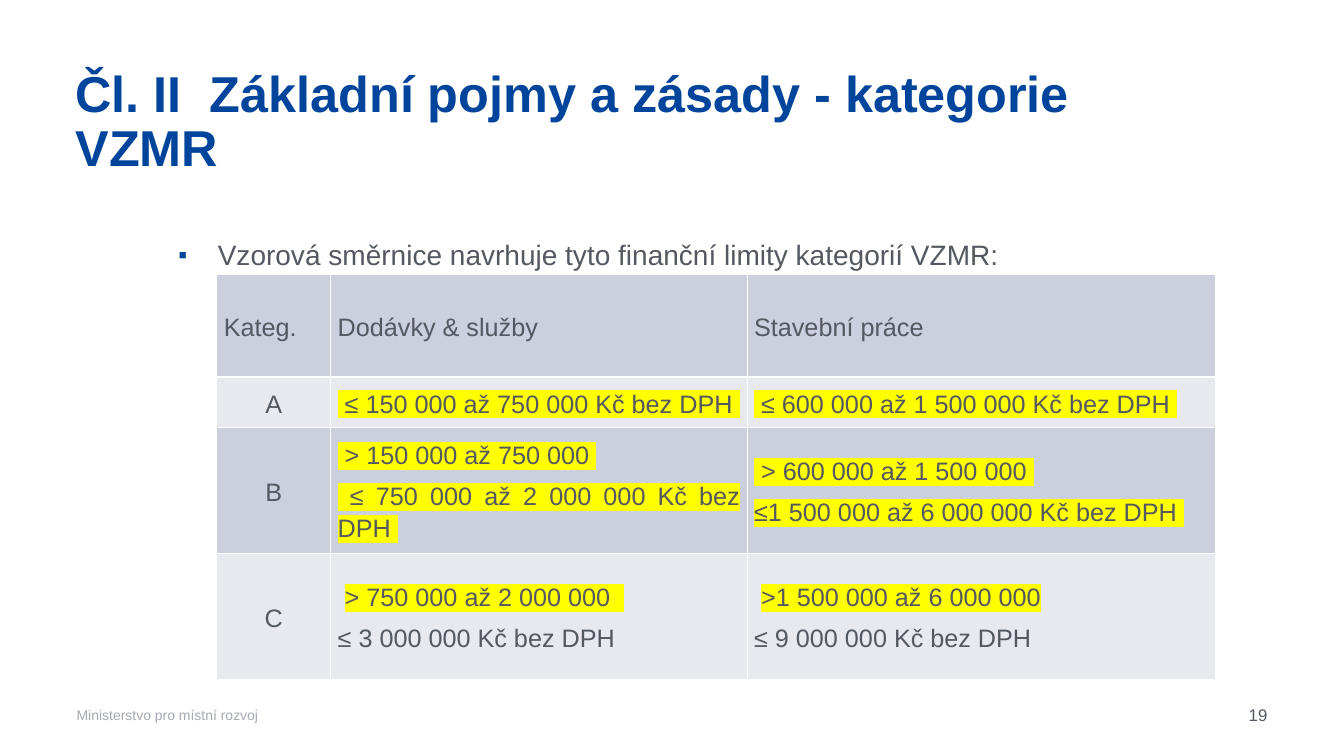
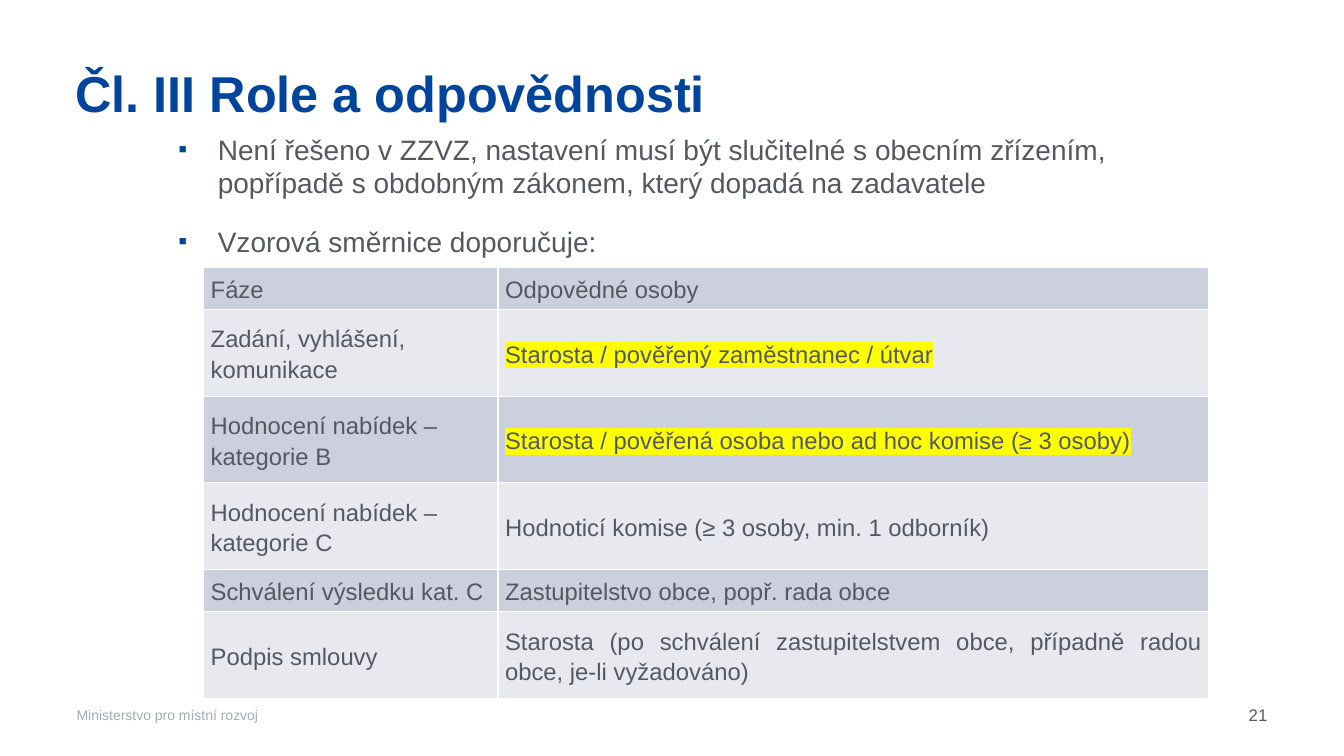
from dataclasses import dataclass
from typing import NamedTuple

import pptx
import pptx.dml.color
import pptx.enum.text
import pptx.oxml
import pptx.oxml.ns
import pptx.util

Inches = pptx.util.Inches
Pt = pptx.util.Pt
RGBColor = pptx.dml.color.RGBColor
Align = pptx.enum.text.PP_ALIGN
Anchor = pptx.enum.text.MSO_ANCHOR

BLUE = RGBColor(0x00, 0x45, 0x9B)
TEXT_GREY = RGBColor(0x54, 0x58, 0x60)
FOOTER_GREY = RGBColor(0xA7, 0xA9, 0xB3)
DARK_BAND = RGBColor(0xCC, 0xCF, 0xDE)
LIGHT_BAND = RGBColor(0xE7, 0xE9, 0xEF)
WHITE = RGBColor(0xFF, 0xFF, 0xFF)
YELLOW = RGBColor(0xFF, 0xFF, 0x00)

FONT = "Arial"
FOOTER = "Ministerstvo pro místní rozvoj"
BULLET_INDENT = Inches(0.39)


class Run(NamedTuple):
    text: str
    marked: bool = False


Paragraph = list[Run]
Cell = list[Paragraph]


def plain(*lines: str) -> Cell:
    return [[Run(line)] for line in lines]


def marked(*lines: str) -> Cell:
    return [[Run(line, True)] for line in lines]


@dataclass
class Grid:
    left: float
    top: float
    columns: list[float]
    row_heights: list[float]
    size: int
    key_align: Align
    gap_before: int
    gap_after: int
    rows: list[list[Cell]]


@dataclass
class Page:
    number: int
    title: str
    body_top: float
    bullets: list[str]
    grid: Grid


PAGES = [
    Page(
        19, "Čl. II  Základní pojmy a zásady - kategorie VZMR", 2.36,
        ["Vzorová směrnice navrhuje tyto finanční limity kategorií VZMR:"],
        Grid(
            2.15, 2.72, [1.13, 4.13, 4.65], [1.02, 0.5, 1.25, 1.25],
            18, Align.CENTER, 3, 3,
            [
                [plain("Kateg."), plain("Dodávky & služby"), plain("Stavební práce")],
                [
                    plain("A"),
                    marked(" ≤ 150 000 až 750 000 Kč bez DPH "),
                    marked(" ≤ 600 000 až 1 500 000 Kč bez DPH "),
                ],
                [
                    plain("B"),
                    marked(" > 150 000 až 750 000 ",
                           " ≤ 750 000 až 2 000 000 Kč bez DPH "),
                    marked(" > 600 000 až 1 500 000 ",
                           "≤1 500 000 až 6 000 000 Kč bez DPH "),
                ],
                [
                    plain("C"),
                    [[Run(" "), Run("> 750 000 až 2 000 000  ", True)],
                     [Run("≤ 3 000 000 Kč bez DPH ")]],
                    [[Run(" "), Run(">1 500 000 až 6 000 000", True)],
                     [Run("≤ 9 000 000 Kč bez DPH ")]],
                ],
            ],
        ),
    ),
    Page(
        21, "Čl. III Role a odpovědnosti", 1.31,
        [
            "Není řešeno v ZZVZ, nastavení musí být slučitelné s obecním zřízením, "
            "popřípadě s obdobným zákonem, který dopadá na zadavatele",
            "Vzorová směrnice doporučuje:",
        ],
        Grid(
            2.02, 2.65, [2.92, 7.05], [0.42, 0.86, 0.86, 0.86, 0.42, 0.86],
            17, Align.LEFT, 0, 8,
            [
                [plain("Fáze"), plain("Odpovědné osoby")],
                [plain("Zadání, vyhlášení, komunikace"),
                 marked("Starosta / pověřený zaměstnanec / útvar")],
                [plain("Hodnocení nabídek – kategorie B"),
                 marked("Starosta / pověřená osoba nebo ad hoc komise (≥ 3 osoby)")],
                [plain("Hodnocení nabídek – kategorie C"),
                 plain("Hodnoticí komise (≥ 3 osoby, min. 1 odborník)")],
                [plain("Schválení výsledku kat. C"),
                 plain("Zastupitelstvo obce, popř. rada obce")],
                [plain("Podpis smlouvy"),
                 plain("Starosta (po schválení zastupitelstvem obce, případně radou "
                       "obce, je-li vyžadováno)")],
            ],
        ),
    ),
]


def xml(markup: str):
    """Parse one DrawingML element, adding its namespace declaration."""
    tag, rest = markup[:-2].split(" ", 1) if markup.endswith("/>") else markup.split(" ", 1)
    end = "/>" if markup.endswith("/>") else ""
    return pptx.oxml.parse_xml(f"{tag} {pptx.oxml.ns.nsdecls('a')} {rest}{end}")


def add_run(paragraph, run: Run, size: int, color: RGBColor, bold: bool = False) -> None:
    text = paragraph.add_run()
    text.text = run.text
    text.font.name = FONT
    text.font.size = Pt(size)
    text.font.bold = bold
    text.font.color.rgb = color
    if run.marked:
        fill = text.font.fill._xPr.find(pptx.oxml.ns.qn("a:solidFill"))
        fill.addnext(xml(f'<a:highlight ><a:srgbClr val="{YELLOW}"/></a:highlight>'))


def add_frame(slide, left: float, top: float, width: float, height: float,
              anchor: Anchor = Anchor.TOP):
    """Add a wrapping text box without insets and return its text frame."""
    frame = slide.shapes.add_textbox(
        Inches(left), Inches(top), Inches(width), Inches(height)).text_frame
    frame.word_wrap = True
    frame.vertical_anchor = anchor
    frame.margin_left = frame.margin_top = frame.margin_right = frame.margin_bottom = 0
    return frame


def paragraph_at(frame, index: int):
    return frame.paragraphs[0] if index == 0 else frame.add_paragraph()


def add_title_and_footer(slide, page: Page) -> None:
    title = add_frame(slide, 0.75, 0.68, 10.83, 1.17).paragraphs[0]
    title.line_spacing = 0.9
    add_run(title, Run(page.title), 36, BLUE, bold=True)

    footer = add_frame(slide, 0.76, 6.89, 4.32, 0.4, Anchor.MIDDLE).paragraphs[0]
    add_run(footer, Run(FOOTER), 10, FOOTER_GREY)

    number = add_frame(slide, 9.57, 6.89, 3, 0.4, Anchor.MIDDLE).paragraphs[0]
    number.alignment = Align.RIGHT
    add_run(number, Run(str(page.number)), 12, TEXT_GREY)


def add_bullets(slide, page: Page) -> None:
    frame = add_frame(slide, 1.77, page.body_top, 9.8, 6.64 - page.body_top)
    for index, bullet in enumerate(page.bullets):
        paragraph = paragraph_at(frame, index)
        properties = paragraph._p.get_or_add_pPr()
        properties.set("marL", str(BULLET_INDENT))
        properties.set("indent", str(-BULLET_INDENT))
        for markup in (
            f'<a:buClr ><a:srgbClr val="{BLUE}"/></a:buClr>',
            '<a:buSzPct val="90000"/>',
            f'<a:buFont typeface="{FONT}"/>',
            '<a:buChar char="▪"/>',
        ):
            properties.append(xml(markup))
        paragraph.space_before = Pt(9 if index else 0)
        paragraph.space_after = Pt(9)
        add_run(paragraph, Run(bullet), 20, TEXT_GREY)


def style_cell(cell, band: RGBColor) -> None:
    cell.margin_left = cell.margin_right = Inches(0.07)
    cell.margin_top = cell.margin_bottom = 0
    cell.vertical_anchor = Anchor.MIDDLE
    properties = cell._tc.get_or_add_tcPr()
    for side in ("lnL", "lnR", "lnT", "lnB"):
        properties.append(xml(
            f'<a:{side} w="{Pt(1)}"><a:solidFill><a:srgbClr val="{WHITE}"/>'
            f'</a:solidFill></a:{side}>'))
    cell.fill.solid()
    cell.fill.fore_color.rgb = band


def add_grid(slide, grid: Grid) -> None:
    table = slide.shapes.add_table(
        len(grid.rows), len(grid.columns), Inches(grid.left), Inches(grid.top),
        Inches(sum(grid.columns)), Inches(sum(grid.row_heights))).table
    table.first_row = table.horz_banding = False
    for column, width in zip(table.columns, grid.columns):
        column.width = Inches(width)
    for row, height in zip(table.rows, grid.row_heights):
        row.height = Inches(height)

    for row_index, row in enumerate(grid.rows):
        is_header = row_index == 0
        for column_index, content in enumerate(row):
            cell = table.cell(row_index, column_index)
            style_cell(cell, LIGHT_BAND if row_index % 2 else DARK_BAND)
            is_key = column_index == 0 and not is_header
            for index, runs in enumerate(content):
                paragraph = paragraph_at(cell.text_frame, index)
                paragraph.alignment = grid.key_align if is_key else Align.JUSTIFY
                paragraph.line_spacing = 1.15
                paragraph.space_before = Pt(grid.gap_before if index else 0)
                paragraph.space_after = Pt(8 if is_header else grid.gap_after)
                for run in runs:
                    add_run(paragraph, run, grid.size, TEXT_GREY)


def main() -> None:
    presentation = pptx.Presentation()
    presentation.slide_width = Inches(13.33)
    presentation.slide_height = Inches(7.5)
    blank = presentation.slide_layouts[6]
    for page in PAGES:
        slide = presentation.slides.add_slide(blank)
        add_title_and_footer(slide, page)
        add_bullets(slide, page)
        add_grid(slide, page.grid)
    presentation.save("out.pptx")


if __name__ == "__main__":
    main()
